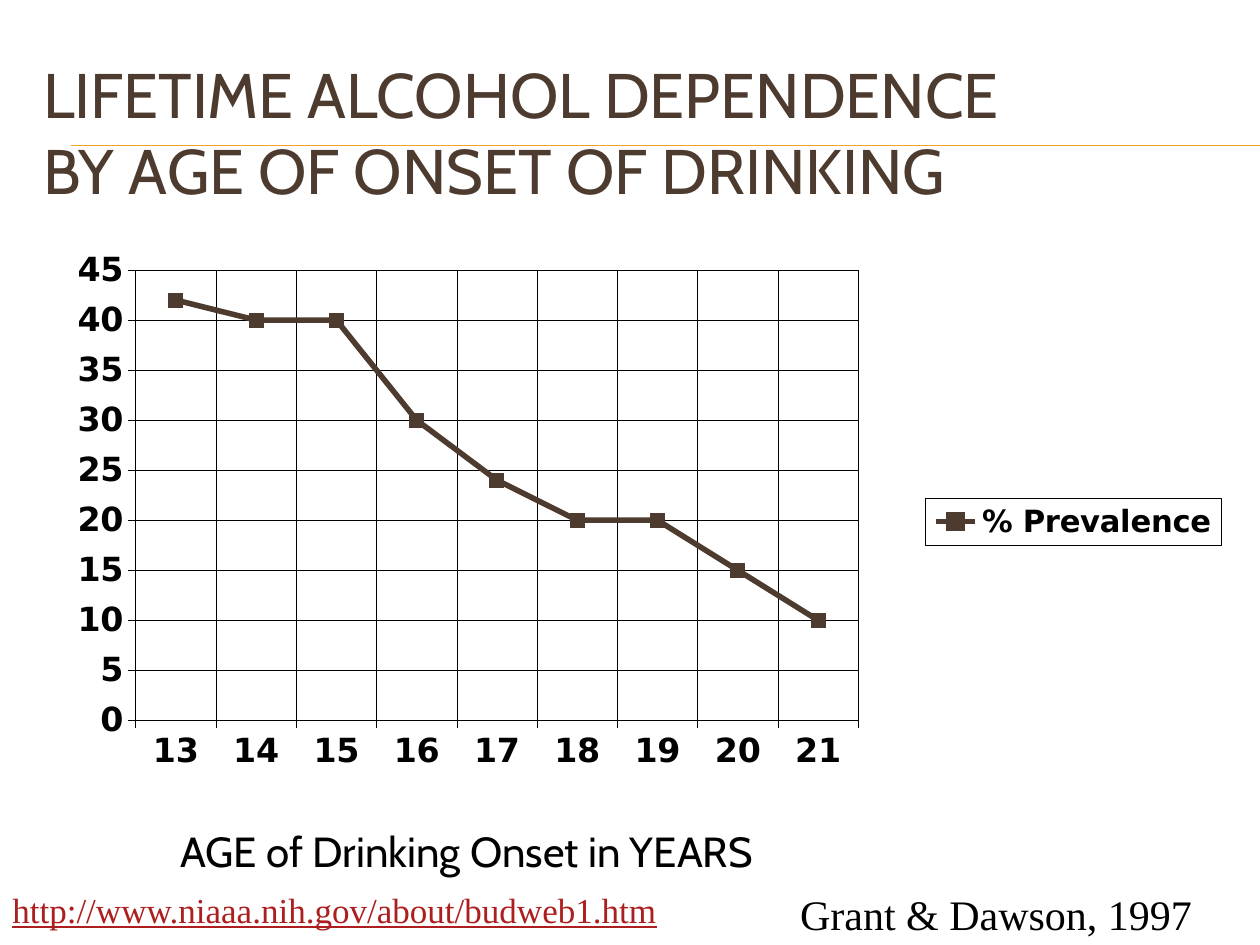
"""Build a slide charting lifetime alcohol dependence by age of drinking onset."""
from lxml import etree
from pptx import Presentation
from pptx import util as u
from pptx.chart import data as cd
from pptx.dml.color import RGBColor
from pptx.enum import chart as ch, shapes, text
from pptx.oxml import ns

BLACK = RGBColor(0x00, 0x00, 0x00)
BROWN = RGBColor(0x4E, 0x3B, 0x30)
GOLD = RGBColor(0xF0, 0xA2, 0x2E)
RED = RGBColor(0xAD, 0x1F, 0x1F)


class SlideBuilder:
    def __init__(self, s):
        self.s = s
        self.heading = "Cabin"
        self.body = "Times New Roman"
        self.chart_font = "DejaVu Sans"

    def style_font(self, f, name, size, color, bold=False):
        f.name, f.size, f.bold = name, u.Pt(size), bold
        f.color.rgb = color

    def style_line(self, line, color, width):
        line.color.rgb = color
        line.width = u.Pt(width)

    def rule(self, x1, x2, y):
        sp = self.s.shapes.add_connector(
            shapes.MSO_CONNECTOR.STRAIGHT, u.Cm(x1), u.Cm(y), u.Cm(x2), u.Cm(y))
        self.style_line(sp.line, GOLD, 0.75)
        etree.SubElement(sp._element.spPr, ns.qn("a:effectLst"))

    def label(self, content, box, font, size, color=BLACK, wrap=True,
              underline=False, anchor=text.MSO_ANCHOR.TOP):
        tf = self.s.shapes.add_textbox(*map(u.Cm, box)).text_frame
        tf.word_wrap = wrap
        tf.vertical_anchor = anchor
        p = tf.paragraphs[0]
        p.text = content
        self.style_font(p.font, font, size, color)
        p.font.underline = underline

    def line_chart(self, box, name, cats, vals, plot):
        data = cd.CategoryChartData()
        data.categories = cats
        data.add_series(name, vals)
        chart = self.s.shapes.add_chart(
            ch.XL_CHART_TYPE.LINE_MARKERS, *map(u.Cm, box), data).chart
        chart.has_title = False
        self.style_font(chart.font, self.chart_font, 19, BLACK, True)
        for axis in (chart.category_axis, chart.value_axis):
            axis.has_major_gridlines = True
            axis.major_tick_mark = ch.XL_TICK_MARK.OUTSIDE
            self.style_font(axis.tick_labels.font, self.chart_font, 19, BLACK, True)
            for line in (axis.format.line, axis.major_gridlines.format.line):
                self.style_line(line, BLACK, 0.25)
        chart.value_axis.minimum_scale = 0
        chart.value_axis.maximum_scale = 45
        chart.value_axis.major_unit = 5
        self.style_series(chart.plots[0])
        self.style_legend(chart)
        self.place_plot(chart, plot)

    def style_series(self, plot):
        plot.vary_by_categories = False
        ser = plot.series[0]
        ser.smooth = False
        self.style_line(ser.format.line, BROWN, 3.17)
        ser.marker.style = ch.XL_MARKER_STYLE.SQUARE
        ser.marker.size = 8
        ser.marker.format.fill.solid()
        ser.marker.format.fill.fore_color.rgb = BROWN
        ser.marker.format.line.color.rgb = BROWN

    def style_legend(self, chart):
        chart.has_legend = True
        legend = chart.legend
        legend.position = ch.XL_LEGEND_POSITION.RIGHT
        legend.include_in_layout = False
        self.style_font(legend.font, self.chart_font, 17.5, BLACK, True)
        border = etree.fromstring(
            f'<c:spPr {ns.nsdecls("c", "a")}><a:noFill/><a:ln w="3175"><a:solidFill>'
            f'<a:srgbClr val="{BLACK}"/></a:solidFill></a:ln></c:spPr>')
        legend._element.find(ns.qn("c:txPr")).addprevious(border)

    def place_plot(self, chart, plot):
        area = chart._chartSpace.chart.plotArea
        for old in area.findall(ns.qn("c:layout")):
            area.remove(old)
        layout = etree.Element(ns.qn("c:layout"))
        manual = etree.SubElement(layout, ns.qn("c:manualLayout"))
        settings = [("layoutTarget", "inner"), ("xMode", "edge"), ("yMode", "edge")]
        for tag, val in settings + list(zip("xywh", plot)):
            etree.SubElement(manual, ns.qn(f"c:{tag}")).set("val", str(val))
        area.insert(0, layout)


def main():
    prs = Presentation()
    prs.slide_width, prs.slide_height = u.Cm(25.4), u.Cm(19.05)
    b = SlideBuilder(prs.slides.add_slide(prs.slide_layouts[6]))
    for y in (2.93, 2.94):
        b.rule(1.43, 25.4, y)
    b.label("LIFETIME ALCOHOL DEPENDENCE\vBY AGE OF ONSET OF DRINKING",
            (0.62, 1.06, 23.93, 3.18), b.heading, 36, BROWN,
            anchor=text.MSO_ANCHOR.MIDDLE)
    b.line_chart((0.55, 4.62, 24.28, 11.79), "% Prevalence",
                 [str(age) for age in range(13, 22)],
                 (42, 40, 40, 30, 24, 20, 20, 15, 10),
                 (0.09, 0.07, 0.6, 0.77))
    b.label("AGE of Drinking Onset in YEARS", (3.38, 16.51, 14.25, 1.27),
            b.heading, 24, wrap=False)
    b.label("http://www.niaaa.nih.gov/about/budweb1.htm", (0, 17.78, 16.64, 1.09),
            b.body, 20, RED, underline=True)
    b.label("Grant & Dawson, 1997", (15.88, 17.78, 9.52, 1.27), b.body, 24)
    prs.save("out.pptx")


if __name__ == "__main__":
    main()
